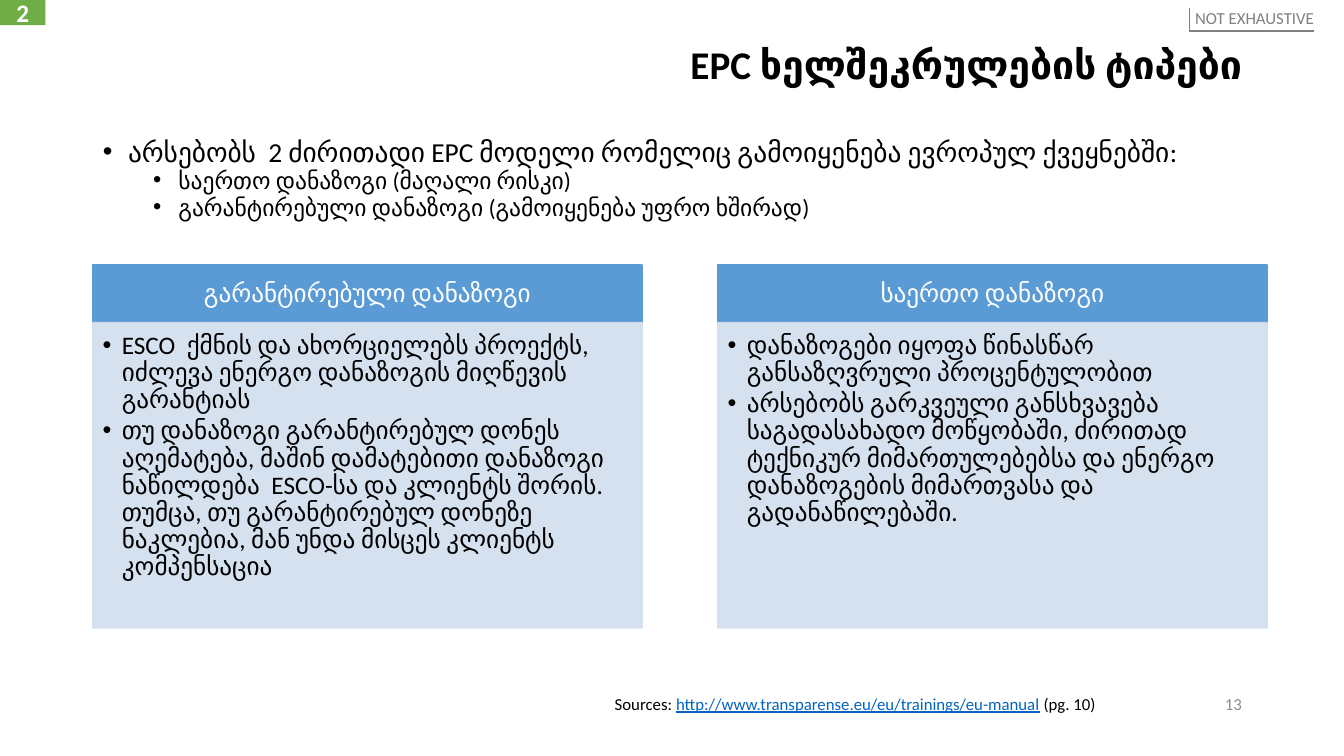
import pptx
import pptx.util
import pptx.dml.color
import pptx.enum.shapes
import pptx.enum.text
import pptx.oxml.ns
import lxml.etree

WIDE, HIGH = 13.33, 7.5
HUES = {"ink": "000000", "white": "FFFFFF", "blue": "5B9BD5", "pale": "D2DEEF",
        "green": "70AD47", "gray": "808080", "dim": "8C8C8C", "link": "0563C1"}
LEFT, SPAN = 6.9, 86.25  # margin and content width, percent of the slide width
COL, STEP = 40.88, 46.5
HEAD_TOP, HEAD_HIGH, BODY_HIGH = 35.07, 7.6, 40.4
TOP, MID = pptx.enum.text.MSO_ANCHOR.TOP, pptx.enum.text.MSO_ANCHOR.MIDDLE
ALIGN = pptx.enum.text.PP_ALIGN

MODELS = [
    ("გარანტირებული დანაზოგი", [
        "ESCO  ქმნის და ახორციელებს პროექტს, იძლევა ენერგო დანაზოგის მიღწევის გარანტიას",
        "თუ დანაზოგი გარანტირებულ დონეს აღემატება, მაშინ დამატებითი დანაზოგი "
        "ნაწილდება  ESCO-სა და კლიენტს შორის. თუმცა, თუ გარანტირებულ დონეზე "
        "ნაკლებია, მან უნდა მისცეს კლიენტს კომპენსაცია"]),
    ("საერთო დანაზოგი", [
        "დანაზოგები იყოფა წინასწარ განსაზღვრული პროცენტულობით",
        "არსებობს გარკვეული განსხვავება საგადასახადო მოწყობაში, ძირითად ტექნიკურ "
        "მიმართულებებსა და ენერგო დანაზოგების მიმართვასა და გადანაწილებაში."]),
]
INTRO = [
    ("არსებობს  2 ძირითადი EPC მოდელი რომელიც გამოიყენება ევროპულ ქვეყნებში:", 0),
    ("საერთო დანაზოგი (მაღალი რისკი)", 1),
    ("გარანტირებული დანაზოგი (გამოიყენება უფრო ხშირად)", 1),
]


def hue(name):
    return pptx.dml.color.RGBColor.from_string(HUES[name])


def area(x, y, wide=0, high=0):
    """Turn percentages of the slide into left, top, width and height."""
    return [pptx.util.Inches(part * side / 100)
            for part, side in ((x, WIDE), (y, HIGH), (wide, WIDE), (high, HIGH))]


def move(shape, box):
    shape.left, shape.top, shape.width, shape.height = box


def frame(shape, anchor=TOP, pads=(0.1, 0.05, 0.1, 0.05), wrap=True):
    text = shape.text_frame
    text.word_wrap = wrap
    text.auto_size = pptx.enum.text.MSO_AUTO_SIZE.NONE
    text.vertical_anchor = anchor
    (text.margin_left, text.margin_top,
     text.margin_right, text.margin_bottom) = map(pptx.util.Inches, pads)
    return text


def line(text, first, align=ALIGN.LEFT, space=1.0, before=0, after=0):
    para = text.paragraphs[0] if first else text.add_paragraph()
    para.alignment, para.line_spacing = align, space
    para.space_before = pptx.util.Pt(0 if first else before)
    para.space_after = pptx.util.Pt(after)
    return para


def dot(para, left, hang):
    """Give the paragraph a bullet and a hanging indent in inches."""
    props = para._p.get_or_add_pPr()
    props.set("marL", str(pptx.util.Inches(left)))
    props.set("indent", str(-pptx.util.Inches(hang)))
    for tag, key, value in (("a:buFont", "typeface", "Arial"), ("a:buChar", "char", "•")):
        lxml.etree.SubElement(props, pptx.oxml.ns.qn(tag)).set(key, value)


def say(para, words, size, color="ink", bold=False, under=False):
    run = para.add_run()
    run.text = words
    font = run.font
    font.name, font.size = "Calibri", pptx.util.Pt(size)
    font.bold, font.underline = bold, under
    font.color.rgb = hue(color)


def fade(fill, share):
    """Set the opacity, in percent, of a solid fill."""
    for color in fill.iter(pptx.oxml.ns.qn("a:srgbClr")):
        lxml.etree.SubElement(color, pptx.oxml.ns.qn("a:alpha")).set("val", str(share * 1000))


def block(slide, box, color, edge=True, solid=100):
    shape = slide.shapes.add_shape(pptx.enum.shapes.MSO_SHAPE.RECTANGLE, *box)
    shape.shadow.inherit = False
    shape.fill.solid()
    shape.fill.fore_color.rgb = hue(color)
    if edge:
        shape.line.color.rgb = hue(color)
        shape.line.width = pptx.util.Pt(1)
    else:
        shape.line.fill.background()
    if solid < 100:
        fade(shape._element.spPr, solid)
    return shape


def rule(slide, start, end, weight):
    ends = area(*start)[:2] + area(*end)[:2]
    link = slide.shapes.add_connector(pptx.enum.shapes.MSO_CONNECTOR.STRAIGHT, *ends)
    link.line.color.rgb = hue("gray")
    link.line.width = pptx.util.Pt(weight)
    lxml.etree.SubElement(link._element.spPr, pptx.oxml.ns.qn("a:effectLst"))


def model(slide, left, name, points):
    head = block(slide, area(left, HEAD_TOP, COL, HEAD_HIGH), "blue")
    text = frame(head, MID, (0.14, 0.08, 0.14, 0.08))
    say(line(text, True, ALIGN.CENTER, 0.9), name, 18, "white")
    body = block(slide, area(left, HEAD_TOP + HEAD_HIGH, COL, BODY_HIGH), "pale", solid=90)
    text = frame(body, TOP, (0.1, 0.1, 0.14, 0.16))
    for rank, point in enumerate(points):
        para = line(text, rank == 0, space=0.9, after=2.7)
        dot(para, 0.19, 0.19)
        say(para, point, 18)


def intro(slide):
    title, body = slide.shapes.title, slide.placeholders[1]
    move(title, area(LEFT, 5.33, SPAN, 7.6))
    say(line(frame(title), True, ALIGN.RIGHT, 0.9), "EPC ხელშეკრულების ტიპები", 28, bold=True)
    move(body, area(LEFT, 18.4, SPAN, 14.8))
    text = frame(body)
    for rank, (words, level) in enumerate(INTRO):
        para = line(text, rank == 0, space=0.7, before=5)
        para.level = level
        dot(para, 0.25 + 0.5 * level, 0.25)
        say(para, words, 16.8 if level else 19.6)


def badge(slide):
    shape = block(slide, area(0, 0, 3.38, 3.33), "green", edge=False)
    say(line(frame(shape, MID), True, ALIGN.CENTER), "2", 18, "white", bold=True)


def label(slide):
    left, top, wide, high = 88.5, 1.07, 9.27, 3.07
    shape = slide.shapes.add_textbox(*area(left, top, wide, high))
    text = frame(shape, pads=(0.04, 0, 0, 0.03), wrap=False)
    say(line(text, True, ALIGN.RIGHT), "NOT EXHAUSTIVE", 12, "gray")
    foot = (left, top + high)
    rule(slide, (left + wide, top + high), foot, 1.5)
    rule(slide, (left, top), foot, 0.5)


def footer(slide):
    shape = slide.shapes.add_textbox(*area(45, 91.07, 49.5, 4))
    para = line(frame(shape), True)
    say(para, "Sources: ", 12)
    say(para, "http://www.transparense.eu/eu/trainings/eu-manual", 12, "link", under=True)
    say(para, " (pg. 10)", 12)
    shape = slide.shapes.add_textbox(*area(70.65, 90.4, 22.5, 5.33))
    say(line(frame(shape, MID), True, ALIGN.RIGHT), "13", 12, "dim")


def main():
    deck = pptx.Presentation()
    deck.slide_width, deck.slide_height = pptx.util.Inches(WIDE), pptx.util.Inches(HIGH)
    slide = deck.slides.add_slide(deck.slide_layouts[1])
    intro(slide)
    for rank, (name, points) in enumerate(MODELS):
        model(slide, LEFT + rank * STEP, name, points)
    badge(slide)
    label(slide)
    footer(slide)
    deck.save("out.pptx")


if __name__ == "__main__":
    main()
